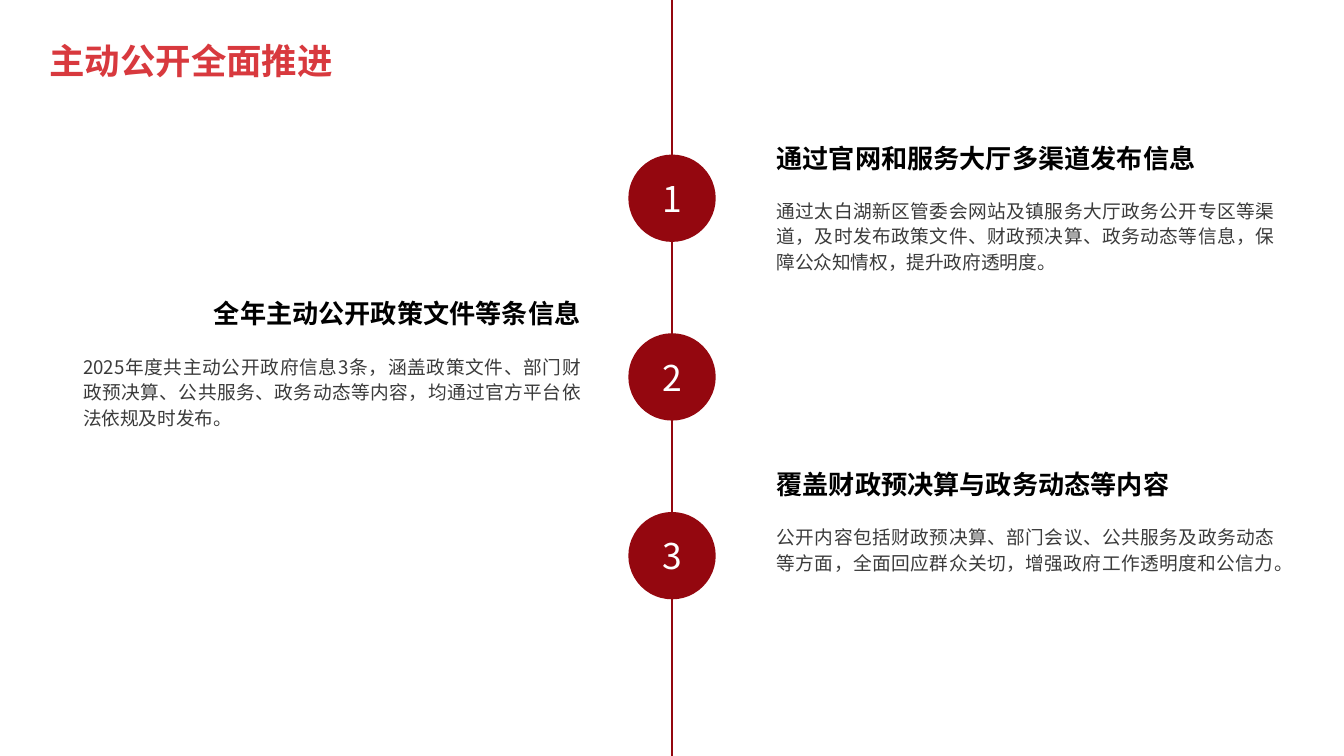
"""Build a timeline slide with three numbered steps on alternating sides."""
import dataclasses
import typing

import lxml.etree
import pptx
import pptx.dml.color
import pptx.enum.shapes
import pptx.enum.text
import pptx.oxml.ns
import pptx.util

Inches = pptx.util.Inches
Align = pptx.enum.text.PP_ALIGN
COLOURS = {"title": "D8393E", "accent": "94070F", "heading": "000000",
           "body": "3B3B3B", "number": "FFFFFF"}
CHINESE_FONT = "Noto Sans CJK JP"
DIGIT_FONT = "Noto Sans CJK SC"
WIDTH = 10
HEIGHT = WIDTH * 9 / 16
CENTRE = WIDTH / 2
DIAMETER = 0.65
FIRST_CIRCLE_TOP, CIRCLE_STEP = 1.15, 1.33
LEFT_COLUMN, RIGHT_COLUMN, COLUMN_WIDTH = 0.52, 5.68, 3.9
BODY_OFFSET = 0.45


@dataclasses.dataclass
class Step:
    """One numbered step: its column, top, heading and body runs."""
    left: float
    top: float
    align: Align
    heading: str
    body: typing.Sequence[str]


STEPS = [
    Step(RIGHT_COLUMN, 0.91, Align.LEFT, "通过官网和服务大厅多渠道发布信息",
         ["通过太白湖新区管委会网站及镇服务大厅政务公开专区等渠道，及时发布政策文件、"
          "财政预决算、政务动态等信息，保障公众知情权，提升政府透明度。"]),
    Step(LEFT_COLUMN, 2.07, Align.RIGHT, "全年主动公开政策文件等条信息",
         ["2025", "年度共主动公开政府信息", "3",
          "条，涵盖政策文件、部门财政预决算、公共服务、政务动态等内容，"
          "均通过官方平台依法依规及时发布。"]),
    Step(RIGHT_COLUMN, 3.34, Align.LEFT, "覆盖财政预决算与政务动态等内容",
         ["公开内容包括财政预决算、部门会议、公共服务及政务动态等方面，"
          "全面回应群众关切，增强政府工作透明度和公信力。"]),
]


def colour(name: str) -> pptx.dml.color.RGBColor:
    """Look up a named colour."""
    return pptx.dml.color.RGBColor.from_string(COLOURS[name])


def write(frame, texts: typing.Sequence[str], size: float, shade: str, align: Align,
          spacing: float = 1, bold: bool = False, inset: float = 0.1) -> None:
    """Fill a text frame with one paragraph, run by run."""
    frame.word_wrap = True
    frame.margin_left = frame.margin_right = Inches(inset)
    frame.margin_top = frame.margin_bottom = Inches(inset)
    para = frame.paragraphs[0]
    para.alignment = align
    para.line_spacing = spacing
    for text in texts:
        span = para.add_run()
        span.text = text
        font = span.font
        font.size = pptx.util.Pt(size)
        font.bold = bold
        font.color.rgb = colour(shade)
        font.name = DIGIT_FONT if text.isdigit() else CHINESE_FONT
        properties = span._r.get_or_add_rPr()
        lxml.etree.SubElement(properties, pptx.oxml.ns.qn("a:ea"), typeface=font.name)


def add_text(page, left: float, top: float, width: float, height: float,
             texts: typing.Sequence[str], size: float, shade: str, align: Align,
             spacing: float, bold: bool = False) -> None:
    """Add a text box at the given place."""
    box = page.shapes.add_textbox(Inches(left), Inches(top), Inches(width), Inches(height))
    write(box.text_frame, texts, size, shade, align, spacing, bold)


def add_axis(page) -> None:
    """Draw the vertical line down the middle."""
    axis = page.shapes.add_connector(
        pptx.enum.shapes.MSO_CONNECTOR.STRAIGHT,
        Inches(CENTRE), Inches(0), Inches(CENTRE), Inches(HEIGHT))
    axis.line.color.rgb = colour("accent")
    axis.line.width = pptx.util.Pt(1.5)
    lxml.etree.SubElement(axis._element.spPr, pptx.oxml.ns.qn("a:effectLst"))


def add_circle(page, index: int) -> None:
    """Draw the numbered circle of a step on the axis."""
    circle = page.shapes.add_shape(
        pptx.enum.shapes.MSO_SHAPE.OVAL, Inches(CENTRE - DIAMETER / 2),
        Inches(FIRST_CIRCLE_TOP + index * CIRCLE_STEP), Inches(DIAMETER), Inches(DIAMETER))
    circle.shadow.inherit = False
    circle.fill.solid()
    circle.fill.fore_color.rgb = colour("accent")
    circle.line.fill.background()
    circle.text_frame.vertical_anchor = pptx.enum.text.MSO_ANCHOR.MIDDLE
    write(circle.text_frame, [str(index + 1)], 19, "number", Align.CENTER, inset=0)


def add_step(page, step: Step) -> None:
    """Add the heading and body of a step."""
    add_text(page, step.left, step.top + BODY_OFFSET, COLUMN_WIDTH, 1.16, step.body,
             10, "body", Align.JUSTIFY, 1.15)
    add_text(page, step.left, step.top, COLUMN_WIDTH, 0.5, [step.heading],
             14, "heading", step.align, 1.2, bold=True)


def main() -> None:
    """Build and save the deck."""
    deck = pptx.Presentation()
    deck.slide_width, deck.slide_height = Inches(WIDTH), Inches(HEIGHT)
    page = deck.slides.add_slide(deck.slide_layouts[6])
    add_axis(page)
    add_text(page, 0.27, 0.13, 9.55, 0.62, ["主动公开全面推进"],
             19, "title", Align.LEFT, 1.2, bold=True)
    for index, step in enumerate(STEPS):
        add_circle(page, index)
        add_step(page, step)
    deck.save("out.pptx")


if __name__ == "__main__":
    main()
